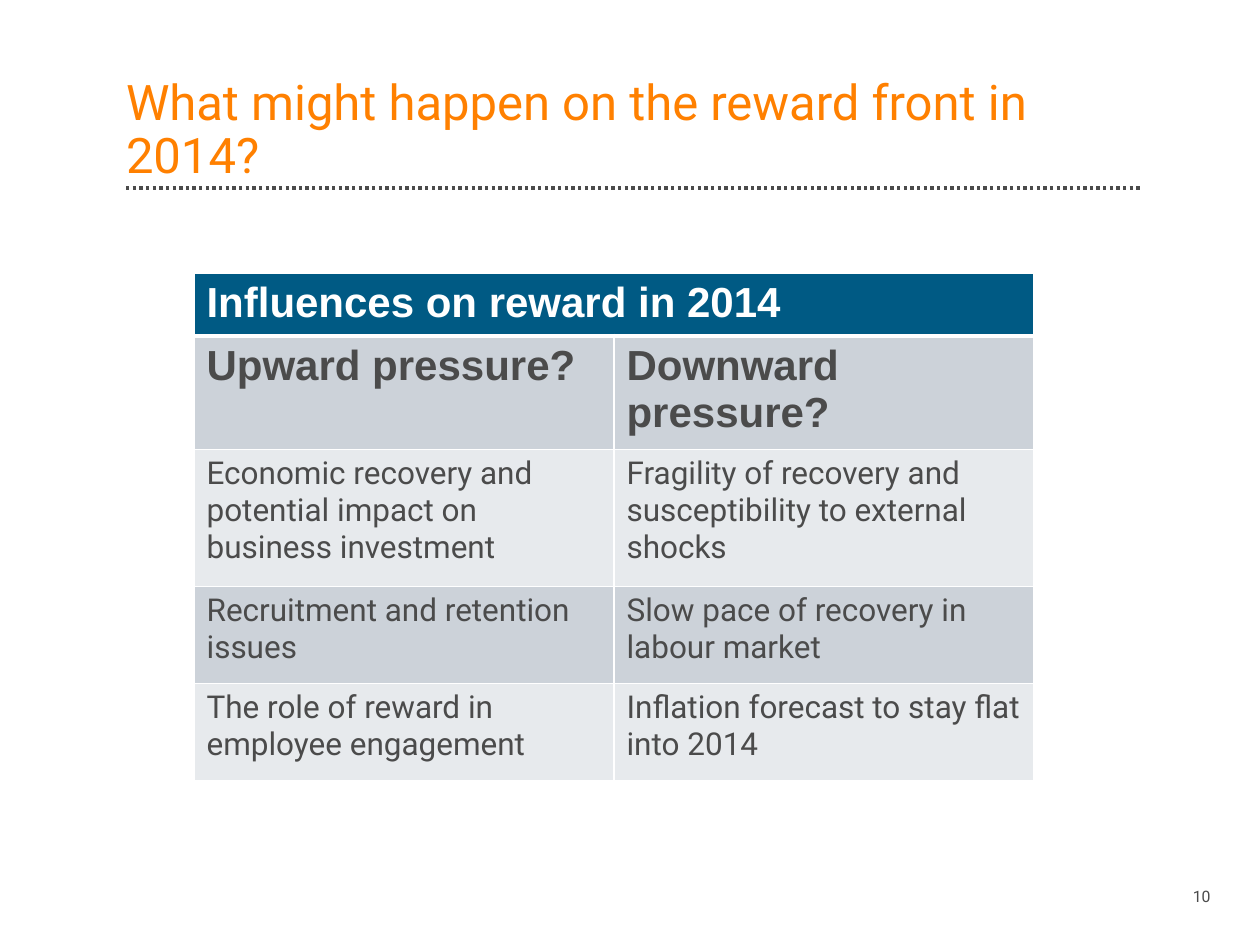
from pptx import Presentation
from pptx.dml.color import RGBColor
from pptx.enum.dml import MSO_LINE_DASH_STYLE as DASH
from pptx.enum.shapes import MSO_CONNECTOR_TYPE as CONNECTOR
from pptx.enum.text import MSO_ANCHOR as ANCHOR, MSO_AUTO_SIZE as AUTO_SIZE, PP_ALIGN as ALIGN
from pptx.oxml import parse_xml
from pptx.oxml.ns import nsdecls, qn
from pptx.util import Pt

PX = 914400 / 126
ORANGE = RGBColor(0xFF, 0x80, 0x00)
GREY = RGBColor(0x4B, 0x4B, 0x4B)
WHITE = RGBColor(0xFF, 0xFF, 0xFF)
BLUE = RGBColor(0x00, 0x5A, 0x84)
BAND_DARK = RGBColor(0xCC, 0xD2, 0xD9)
BAND_LIGHT = RGBColor(0xE7, 0xEA, 0xED)

TITLE = "What might happen on the reward front in 2014?"
HEADING = "Influences on reward in 2014"
ROWS = [
    ("Upward pressure?", "Downward pressure?"),
    ("Economic recovery and potential impact on business investment",
     "Fragility of recovery and susceptibility to external shocks"),
    ("Recruitment and retention issues", "Slow pace of recovery in labour market"),
    ("The role of reward in employee engagement", "Inflation forecast to stay flat into 2014"),
]
ROW_HEIGHTS = [55, 55, 137, 97, 97]


def px(length):
    return round(length * PX)


def write(frame, text, size, color=GREY, font="Roboto", bold=False, align=ALIGN.LEFT, spacing=None):
    frame.word_wrap = True
    para = frame.paragraphs[0]
    para.alignment = align
    para.space_before = Pt(0)
    if spacing:
        para.line_spacing = spacing
    span = para.add_run()
    span.text = text
    span.font.size = Pt(size)
    span.font.name = font
    span.font.bold = bold
    span.font.color.rgb = color


def add_title(page, left, top, width, height):
    rule_y = top + height + 4
    rule = page.shapes.add_connector(
        CONNECTOR.STRAIGHT, px(left), px(rule_y), px(left + width), px(rule_y))
    rule.line.color.rgb = GREY
    rule.line.width = Pt(1.9)
    rule.line.dash_style = DASH.ROUND_DOT
    rule._element.spPr.append(parse_xml(f"<a:effectLst {nsdecls('a')}/>"))

    title = page.shapes.title
    title.left, title.top, title.width, title.height = map(px, (left, top, width, height))
    frame = title.text_frame
    frame.margin_left = frame.margin_top = frame.margin_right = frame.margin_bottom = 0
    frame.vertical_anchor = ANCHOR.BOTTOM
    frame.auto_size = AUTO_SIZE.NONE
    write(frame, TITLE, 28, ORANGE, spacing=0.9)


def add_page_number(page, left, top, width, height):
    box = page.shapes.add_textbox(*map(px, (left, top, width, height)))
    write(box.text_frame, "10", 9, align=ALIGN.RIGHT)


def set_borders(cell, top=1, bottom=1):
    properties = cell._tc.get_or_add_tcPr()
    for index, (side, width) in enumerate(zip("LRTB", (1, 1, top, bottom))):
        properties.insert(index, parse_xml(
            f'<a:ln{side} {nsdecls("a")} w="{Pt(width)}"><a:solidFill>'
            f'<a:srgbClr val="{WHITE}"/></a:solidFill></a:ln{side}>'))


def fill_cell(cell, text, fill, size, top=1, bottom=1, **style):
    cell.fill.solid()
    cell.fill.fore_color.rgb = fill
    set_borders(cell, top, bottom)
    if text:
        write(cell.text_frame, text, size, **style)


def add_influences(page, left, top, width, height):
    table = page.shapes.add_table(
        len(ROW_HEIGHTS), 2, *map(px, (left, top, width, height))).table
    for row, row_height in zip(table.rows, ROW_HEIGHTS):
        row.height = px(row_height)
    table.cell(0, 0).merge(table.cell(0, 1))
    for column, text in enumerate((HEADING, "")):
        fill_cell(table.cell(0, column), text, BLUE, 24, bottom=3,
                  color=WHITE, font="Arial", bold=True)
    for row, texts in enumerate(ROWS, start=1):
        subheading = row == 1
        for column, text in enumerate(texts):
            fill_cell(table.cell(row, column), text,
                      BAND_DARK if row % 2 else BAND_LIGHT,
                      24 if subheading else 18,
                      top=3 if subheading else 1,
                      font="Arial" if subheading else "Roboto", bold=subheading)


def main():
    deck = Presentation()
    deck.slide_width, deck.slide_height = px(1260), px(945)
    page = deck.slides.add_slide(deck.slide_layouts[5])
    add_title(page, 126, 69, 1015, 115)
    add_page_number(page, 1160, 881, 63, 32)
    add_influences(page, 194, 273, 840, sum(ROW_HEIGHTS))
    deck.save("out.pptx")


if __name__ == "__main__":
    main()
